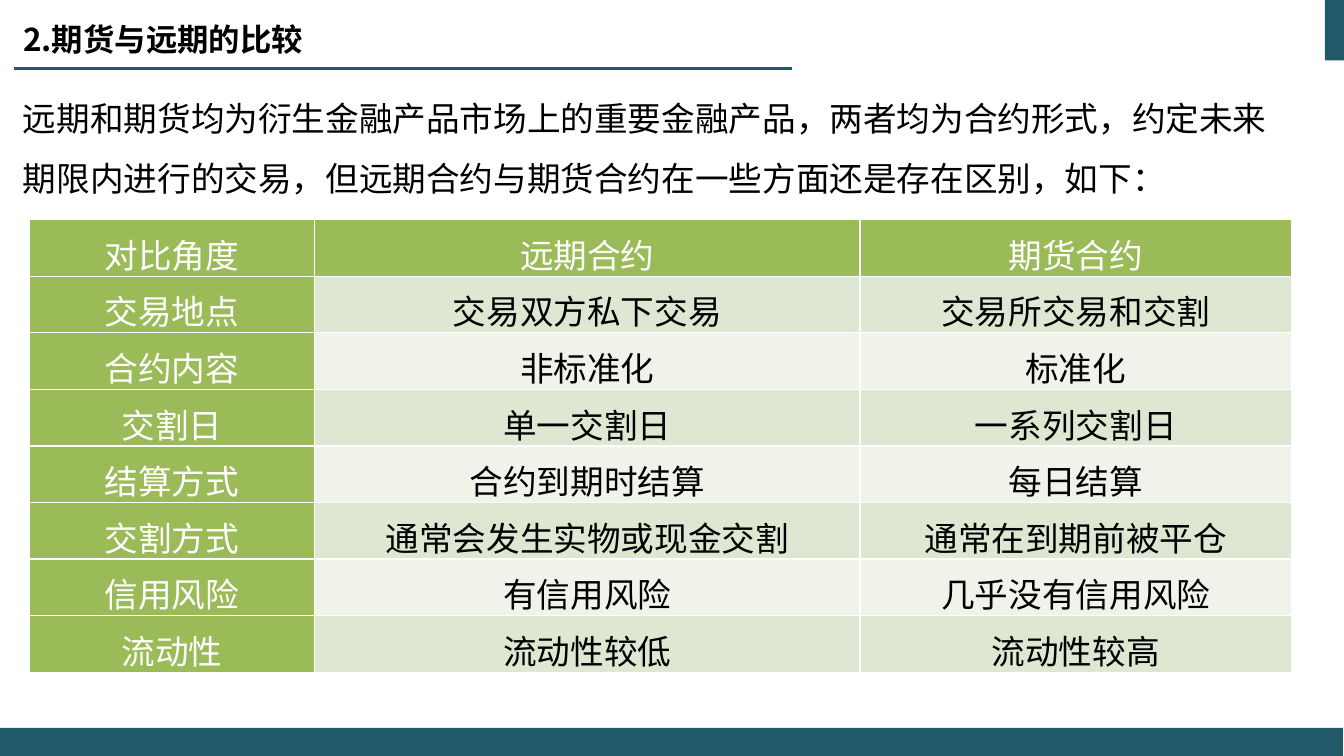
from lxml.etree import SubElement
from pptx import Presentation
from pptx.dml.color import RGBColor
from pptx.enum.shapes import MSO_CONNECTOR, MSO_SHAPE
from pptx.enum.text import MSO_ANCHOR, PP_ALIGN
from pptx.oxml.ns import qn
from pptx.util import Inches, Pt

COLOURS = {
    "teal": "215968",
    "green": "9BBB59",
    "band_dark": "DEE7D1",
    "band_light": "EFF3EA",
    "black": "000000",
    "white": "FFFFFF",
}

COMPARISON = [
    ("对比角度", "远期合约", "期货合约"),
    ("交易地点", "交易双方私下交易", "交易所交易和交割"),
    ("合约内容", "非标准化", "标准化"),
    ("交割日", "单一交割日", "一系列交割日"),
    ("结算方式", "合约到期时结算", "每日结算"),
    ("交割方式", "通常会发生实物或现金交割", "通常在到期前被平仓"),
    ("信用风险", "有信用风险", "几乎没有信用风险"),
    ("流动性", "流动性较低", "流动性较高"),
]


class SlideBuilder:
    title_font = "Noto Sans CJK SC"
    body_font = "Calibri"
    table_font = "Arial"
    text_size = 24

    def __init__(self, slide):
        self.slide = slide

    def colour(self, name):
        return RGBColor.from_string(COLOURS[name])

    def box(self, left, top, width, height):
        return [Inches(length) for length in (left, top, width, height)]

    def format_run(self, paragraph, font, size, colour, bold=False):
        run = paragraph.runs[0]
        run.font.name = font
        run.font.size = Pt(size)
        run.font.bold = bold
        run.font.color.rgb = self.colour(colour)
        return run

    def bar(self, *place):
        bar = self.slide.shapes.add_shape(MSO_SHAPE.RECTANGLE, *self.box(*place))
        bar.shadow.inherit = False
        bar.fill.solid()
        bar.fill.fore_color.rgb = self.colour("teal")
        bar.line.fill.background()

    def rule(self, *ends):
        rule = self.slide.shapes.add_connector(MSO_CONNECTOR.STRAIGHT, *self.box(*ends))
        rule.line.color.rgb = self.colour("teal")
        rule.line.width = Pt(1.5)
        SubElement(rule._element.spPr, qn("a:effectLst"))

    def title(self, text, *place):
        title = self.slide.shapes.title
        title.left, title.top, title.width, title.height = self.box(*place)
        frame = title.text_frame
        frame.text = text
        frame.word_wrap = True
        frame.vertical_anchor = MSO_ANCHOR.MIDDLE
        heading = frame.paragraphs[0]
        heading.alignment = PP_ALIGN.LEFT
        run = self.format_run(heading, self.title_font, 28, "black", True)
        properties = run.font._element
        properties.set("cap", "small")
        SubElement(properties, qn("a:ea"), typeface=self.title_font)

    def body(self, text, *place):
        frame = self.slide.shapes.add_textbox(*self.box(*place)).text_frame
        frame.word_wrap = True
        frame.text = text
        paragraph = frame.paragraphs[0]
        paragraph.line_spacing = 1.5
        self.format_run(paragraph, self.body_font, self.text_size, "black")

    def border(self, cell):
        properties = cell._tc.get_or_add_tcPr()
        for index, side in enumerate(("a:lnL", "a:lnR", "a:lnT", "a:lnB")):
            edge = properties.makeelement(qn(side), {"w": str(Pt(1))})
            SubElement(SubElement(edge, qn("a:solidFill")), qn("a:srgbClr"), val=COLOURS["white"])
            properties.insert(index, edge)

    def cell(self, cell, text, fill, colour):
        cell.fill.solid()
        cell.fill.fore_color.rgb = self.colour(fill)
        cell.margin_left = cell.margin_right = Inches(0.07)
        cell.margin_top = cell.margin_bottom = 0
        cell.text = text
        paragraph = cell.text_frame.paragraphs[0]
        paragraph.alignment = PP_ALIGN.CENTER
        paragraph.line_spacing = 1.2
        self.format_run(paragraph, self.table_font, self.text_size, colour)
        self.border(cell)

    def table(self, rows, widths, *place):
        table = self.slide.shapes.add_table(len(rows), len(widths), *self.box(*place)).table
        for column, width in zip(table.columns, widths):
            column.width = Inches(width)
        for row, texts in enumerate(rows):
            band = "band_dark" if row % 2 else "band_light"
            for column, text in enumerate(texts):
                heading = row == 0 or column == 0
                fill, colour = ("green", "white") if heading else (band, "black")
                self.cell(table.cell(row, column), text, fill, colour)


def main():
    presentation = Presentation()
    presentation.slide_width = Inches(13.33)
    presentation.slide_height = Inches(7.5)
    builder = SlideBuilder(presentation.slides.add_slide(presentation.slide_layouts[5]))
    builder.bar(13.14, 0, 0.19, 0.6)
    builder.rule(7.86, 0.68, 0.14, 0.68)
    builder.bar(0, 7.22, 13.32, 0.28)
    builder.title("2.期货与远期的比较", 0.13, 0.05, 11.12, 0.61)
    builder.body(
        "远期和期货均为衍生金融产品市场上的重要金融产品，两者均为合约形式，约定未来"
        "期限内进行的交易，但远期合约与期货合约在一些方面还是存在区别，如下：",
        0.13, 0.72, 12.84, 1.4,
    )
    builder.table(COMPARISON, (2.83, 5.41, 4.28), 0.29, 2.18, 12.52, 4.49)
    presentation.save("out.pptx")


if __name__ == "__main__":
    main()
